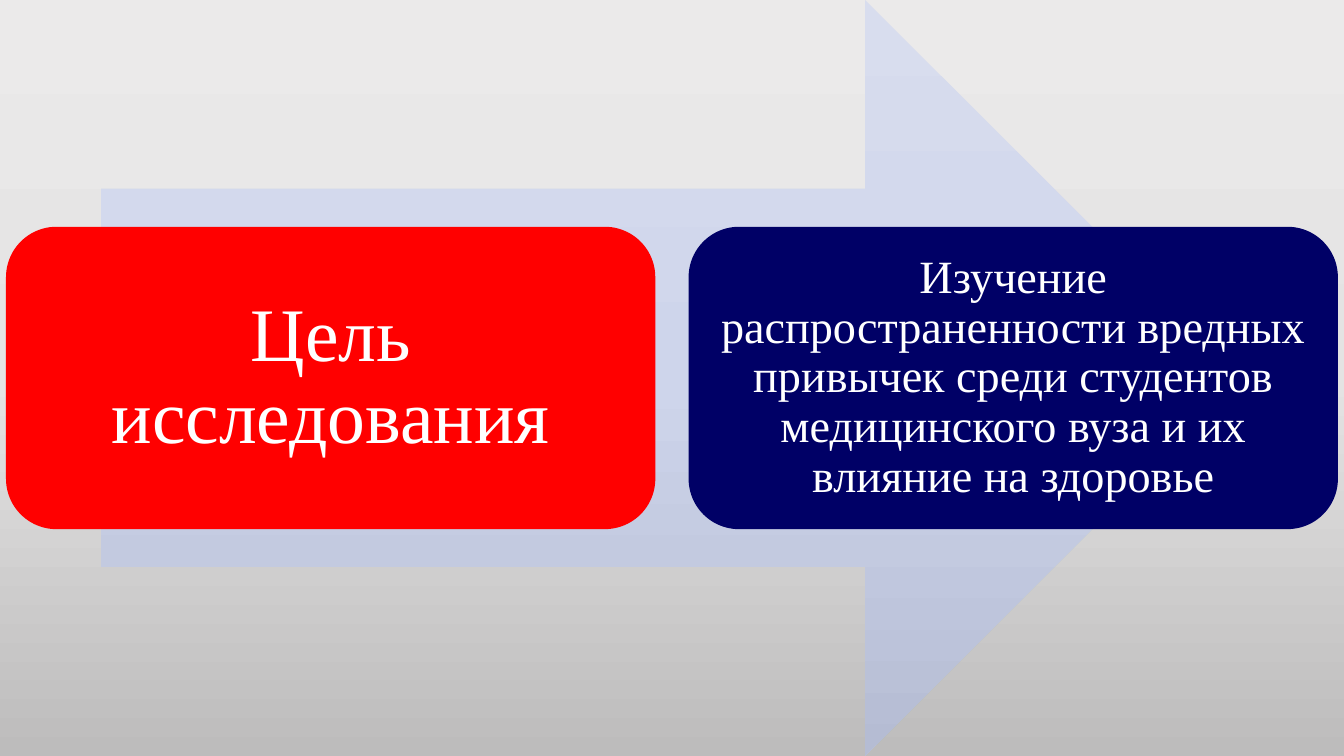
from dataclasses import dataclass

from lxml.etree import SubElement
from pptx import Presentation
from pptx.dml.color import RGBColor
from pptx.dml.fill import FillFormat
from pptx.enum.shapes import MSO_SHAPE
from pptx.enum.text import MSO_ANCHOR, PP_ALIGN
from pptx.oxml.ns import qn
from pptx.oxml.xmlchemy import BaseOxmlElement
from pptx.slide import Slide
from pptx.util import Inches, Pt

WHITE = RGBColor(0xFF, 0xFF, 0xFF)
RED = RGBColor(0xFF, 0x00, 0x00)
NAVY = RGBColor(0x00, 0x00, 0x66)
BACKGROUND_COLORS = (
    RGBColor(0xEB, 0xEA, 0xEA),
    RGBColor(0xE4, 0xE3, 0xE3),
    RGBColor(0xBD, 0xBC, 0xBC),
)
ARROW_COLORS = (
    RGBColor(0xD8, 0xDD, 0xEE),
    RGBColor(0xCE, 0xD5, 0xEB),
    RGBColor(0xB5, 0xBC, 0xD3),
)

SLIDE_WIDTH = 13.33
SLIDE_HEIGHT = 7.5
CARD_WIDTH = 6.44
CARD_HEIGHT = 3
CARD_TOP = (SLIDE_HEIGHT - CARD_HEIGHT) / 2
FONT_NAME = "Times New Roman"


@dataclass(frozen=True)
class Card:
    text: str
    left: float
    color: RGBColor
    size: float
    inset: float


CARDS = (
    Card("Цель исследования", 0.06, RED, 54, 0.23),
    Card(
        "Изучение распространенности вредных привычек среди студентов "
        "медицинского вуза и их влияние на здоровье",
        6.83,
        NAVY,
        33,
        0.14,
    ),
)


def fill_downward(
    fill: FillFormat, owner: BaseOxmlElement, colors: tuple[RGBColor, ...]
) -> None:
    fill.gradient()
    fill.gradient_angle = 270
    stops = next(owner.iter(qn("a:gsLst")))
    for stop in list(stops):
        stops.remove(stop)
    for index, color in enumerate(colors):
        position = 100000 * index // (len(colors) - 1)
        stop = SubElement(stops, qn("a:gs"), pos=str(position))
        SubElement(stop, qn("a:srgbClr"), val=str(color))


def add_arrow(page: Slide) -> None:
    arrow = page.shapes.add_shape(
        MSO_SHAPE.RIGHT_ARROW, Inches(1), 0, Inches(11.33), Inches(SLIDE_HEIGHT)
    )
    arrow.shadow.inherit = False
    arrow.line.fill.background()
    fill_downward(arrow.fill, arrow.element, ARROW_COLORS)


def add_card(page: Slide, card: Card) -> None:
    box = page.shapes.add_shape(
        MSO_SHAPE.ROUNDED_RECTANGLE,
        Inches(card.left),
        Inches(CARD_TOP),
        Inches(CARD_WIDTH),
        Inches(CARD_HEIGHT),
    )
    box.shadow.inherit = False
    box.fill.solid()
    box.fill.fore_color.rgb = card.color
    box.line.fill.background()

    frame = box.text_frame
    inset = Inches(card.inset)
    frame_format = {
        "word_wrap": True,
        "vertical_anchor": MSO_ANCHOR.MIDDLE,
        "margin_left": inset,
        "margin_top": inset,
        "margin_right": inset,
        "margin_bottom": inset,
    }
    for name, value in frame_format.items():
        setattr(frame, name, value)

    para = frame.paragraphs[0]
    para.alignment = PP_ALIGN.CENTER
    para.line_spacing = 0.9
    span = para.add_run()
    span.text = card.text
    for name, value in {"name": FONT_NAME, "size": Pt(card.size)}.items():
        setattr(span.font, name, value)
    span.font.color.rgb = WHITE


def main() -> None:
    deck = Presentation()
    deck.slide_width = Inches(SLIDE_WIDTH)
    deck.slide_height = Inches(SLIDE_HEIGHT)
    page = deck.slides.add_slide(deck.slide_layouts[6])
    fill_downward(page.background.fill, page.element, BACKGROUND_COLORS)
    add_arrow(page)
    for card in CARDS:
        add_card(page, card)
    deck.save("out.pptx")


if __name__ == "__main__":
    main()
